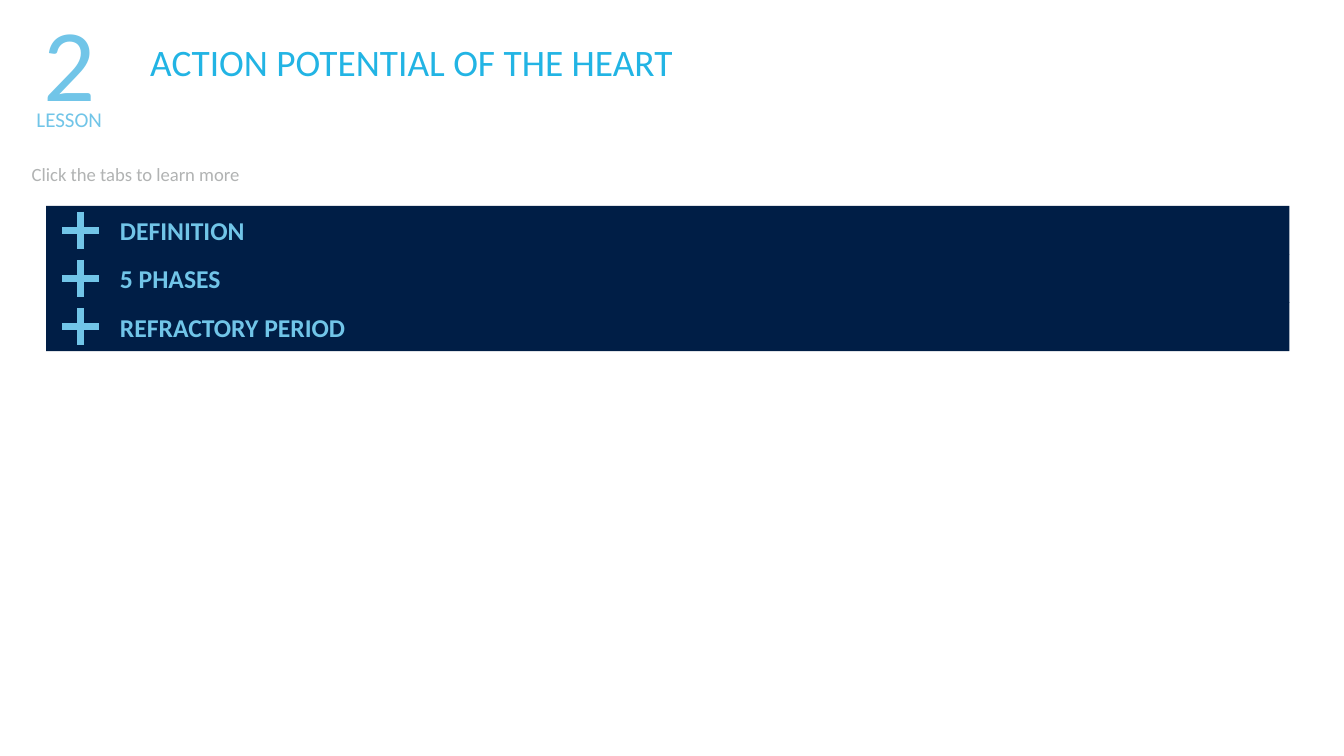
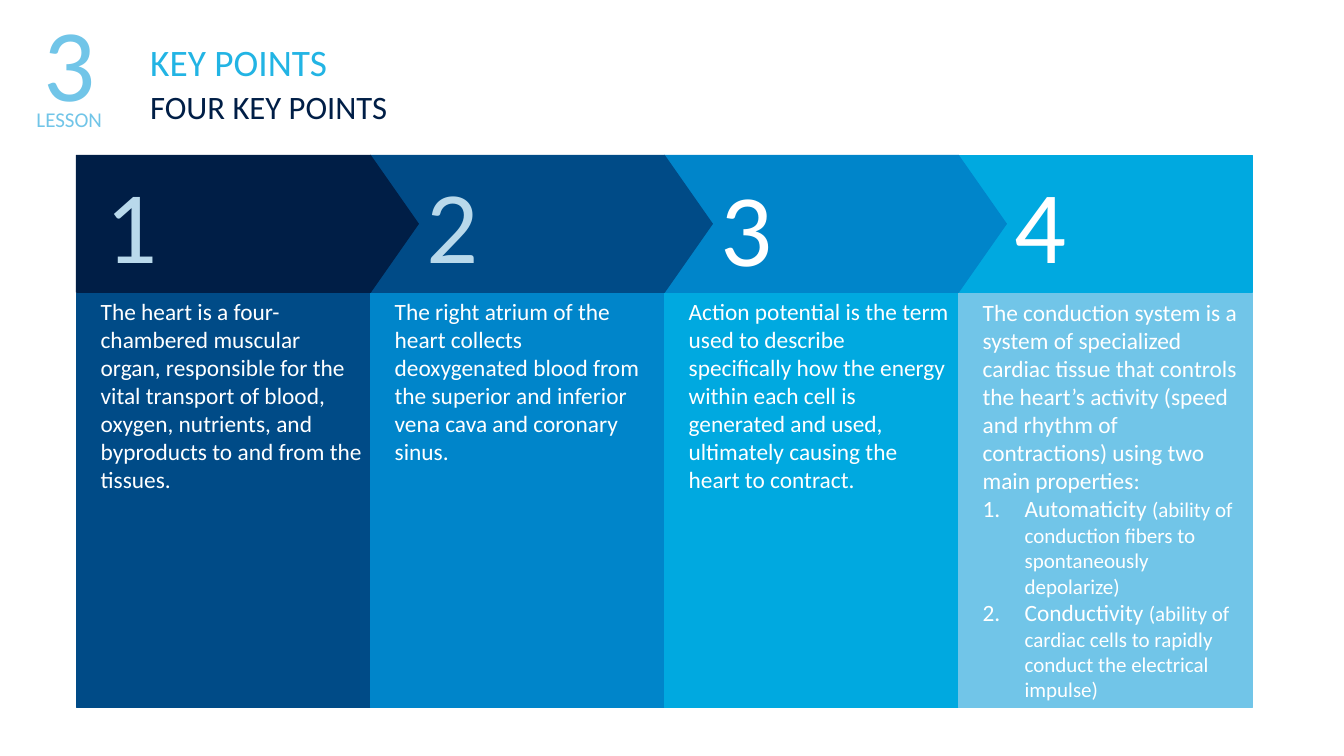
from lxml import etree
from pptx import Presentation
from pptx.dml.color import RGBColor
from pptx.enum.shapes import MSO_CONNECTOR, MSO_SHAPE
from pptx.enum.text import MSO_ANCHOR, PP_ALIGN
from pptx.oxml.ns import qn
from pptx.util import Inches, Pt

STRAIGHT = MSO_CONNECTOR.STRAIGHT
RECTANGLE, PENTAGON = MSO_SHAPE.RECTANGLE, MSO_SHAPE.PENTAGON
TOP, MIDDLE = MSO_ANCHOR.TOP, MSO_ANCHOR.MIDDLE
LEFT, CENTER = PP_ALIGN.LEFT, PP_ALIGN.CENTER

FONT = "Calibri"
COLORS = {
    "navy": "001E46", "deep": "004B87", "blue": "0085CA", "cyan": "00A9E0",
    "sky": "71C5E8", "title": "22B4E4", "pale": "B9D9EB", "grey": "B1B3B3",
    "white": "FFFFFF",
}


def write(shape, paragraphs, size, color, bold=False, align=LEFT, anchor=TOP, spacing=None):
    """Fill a shape with text; each paragraph is a list of (text, size) runs or a string."""
    frame = shape.text_frame
    frame.word_wrap = True
    frame.vertical_anchor = anchor
    for index, content in enumerate(paragraphs):
        paragraph = frame.add_paragraph() if index else frame.paragraphs[0]
        paragraph.alignment = align
        paragraph.line_spacing = spacing
        runs = [(content, size)] if isinstance(content, str) else content
        for text, run_size in runs:
            run = paragraph.add_run()
            run.text = text
            run.font.name = FONT
            run.font.size = Pt(run_size)
            run.font.bold = bold
            run.font.color.rgb = RGBColor.from_string(COLORS[color])


def add_block(slide, kind, left, top, width, height, color, outlined=True):
    shape = slide.shapes.add_shape(kind, Inches(left), Inches(top), Inches(width), Inches(height))
    shape.shadow.inherit = False
    shape.fill.solid()
    shape.fill.fore_color.rgb = RGBColor.from_string(COLORS[color])
    if outlined:
        shape.line.color.rgb = RGBColor.from_string(COLORS[color])
        shape.line.width = Pt(1)
    else:
        shape.line.fill.background()
    return shape


presentation = Presentation()
presentation.slide_width = Inches(16)
presentation.slide_height = Inches(9)

# Lesson number and titles on both slides
slides = []
for number, title, subtitle in [
    ("2", "ACTION POTENTIAL OF THE HEART", None),
    ("3", "KEY POINTS", "FOUR KEY POINTS"),
]:
    slide = presentation.slides.add_slide(presentation.slide_layouts[6])
    slides.append(slide)
    header = [
        ("LESSON", 0.12, 1.22, 1.41, 0.4, 18, "sky", CENTER, None),
        (number, 0.12, 0.1, 1.41, 1.22, 88, "sky", CENTER, 0.9),
        (title, 1.69, 0.48, 8.46, 0.54, 32, "title", LEFT, 0.9),
    ]
    if subtitle:
        header.append((subtitle, 1.69, 1.04, 5.76, 0.54, 28, "navy", LEFT, 0.9))
    for text, left, top, width, height, size, color, align, spacing in header:
        box = slide.shapes.add_textbox(Inches(left), Inches(top), Inches(width), Inches(height))
        write(box, [text], size, color, align=align, spacing=spacing)

tabs_slide, points_slide = slides

# Tabs with plus signs
hint = tabs_slide.shapes.add_textbox(Inches(0.28), Inches(1.92), Inches(8), Inches(0.34))
write(hint, ["Click the tabs to learn more"], 16, "grey", spacing=0.9)

TAB_TOP, TAB_PITCH, TAB_HEIGHT = 2.45, 0.575, 0.58
PLUS_X, PLUS_ARM = 0.96, 0.22
for row, label in enumerate(["DEFINITION", "5 PHASES", "REFRACTORY PERIOD"]):
    top = TAB_TOP + row * TAB_PITCH
    tab = add_block(tabs_slide, RECTANGLE, 0.55, top, 14.8, TAB_HEIGHT, "navy", outlined=False)
    write(tab, [label], 22, "sky", bold=True, anchor=MIDDLE)
    tab.text_frame.paragraphs[0]._p.get_or_add_pPr().set("marL", str(Inches(0.78)))
    plus_y = top + TAB_HEIGHT / 2
    for arm_x, arm_y in [(0, PLUS_ARM), (PLUS_ARM, 0)]:
        stroke = tabs_slide.shapes.add_connector(
            STRAIGHT, Inches(PLUS_X - arm_x), Inches(plus_y - arm_y),
            Inches(PLUS_X + arm_x), Inches(plus_y + arm_y))
        stroke.line.color.rgb = RGBColor.from_string(COLORS["sky"])
        stroke.line.width = Pt(6)
        etree.SubElement(stroke._element.spPr, qn("a:effectLst"))

# Key points: arrow color, body color, number color, number left and top, paragraphs
COLUMN_LEFT, COLUMN_PITCH, COLUMN_WIDTH = 0.91, 3.5, 3.5
points = [
    ("navy", "deep", "pale", 0.25, 1.87, [
        "The heart is a four-chambered muscular organ, responsible for the vital transport "
        "of blood, oxygen, nutrients, and byproducts to and from the tissues."]),
    ("deep", "blue", "pale", 0.57, 1.87, [
        "The right atrium of the heart collects deoxygenated blood from the superior and "
        "inferior vena cava and coronary sinus."]),
    ("blue", "cyan", "white", 0.57, 1.9, [
        "Action potential is the term used to describe specifically how the energy within "
        "each cell is generated and used, ultimately causing the heart to contract."]),
    ("cyan", "sky", "white", 0.57, 1.87, [
        "The conduction system is a system of specialized cardiac tissue that controls the "
        "heart’s activity (speed and rhythm of contractions) using two main properties:",
        [("Automaticity ", 20),
         ("(ability of conduction fibers to spontaneously depolarize)", 18)],
        [("Conductivity ", 20),
         ("(ability of cardiac cells to rapidly conduct the electrical impulse)", 18)]]),
]
last = len(points) - 1

# Arrows run from right to left so that each tip overlaps the next one
for column in range(last, -1, -1):
    left = COLUMN_LEFT + column * COLUMN_PITCH
    color = points[column][0]
    if column == last:
        add_block(points_slide, RECTANGLE, left, 1.85, COLUMN_WIDTH, 1.63, color)
    else:
        arrow = add_block(points_slide, PENTAGON, left, 1.85, 4.07, 1.63, color)
        arrow.adjustments[0] = 0.35

# Numbers and bodies
for column, (_, body_color, number_color, offset, number_top, paragraphs) in enumerate(points):
    left = COLUMN_LEFT + column * COLUMN_PITCH
    number = points_slide.shapes.add_textbox(
        Inches(left + offset), Inches(number_top), Inches(0.88), Inches(1.58))
    write(number, [str(column + 1)], 88, number_color)

    body = add_block(points_slide, RECTANGLE, left, 3.49, COLUMN_WIDTH, 4.93, body_color)
    write(body, paragraphs, 20, "white", anchor=MIDDLE if column == last else TOP)
    for index, paragraph in enumerate(body.text_frame.paragraphs):
        properties = paragraph._p.get_or_add_pPr()
        properties.set("marL", str(Inches(0.69 if index else 0.19)))
        if index:
            properties.set("indent", str(Inches(-0.5)))
            etree.SubElement(properties, qn("a:buAutoNum"), type="arabicPeriod")

presentation.save("out.pptx")
